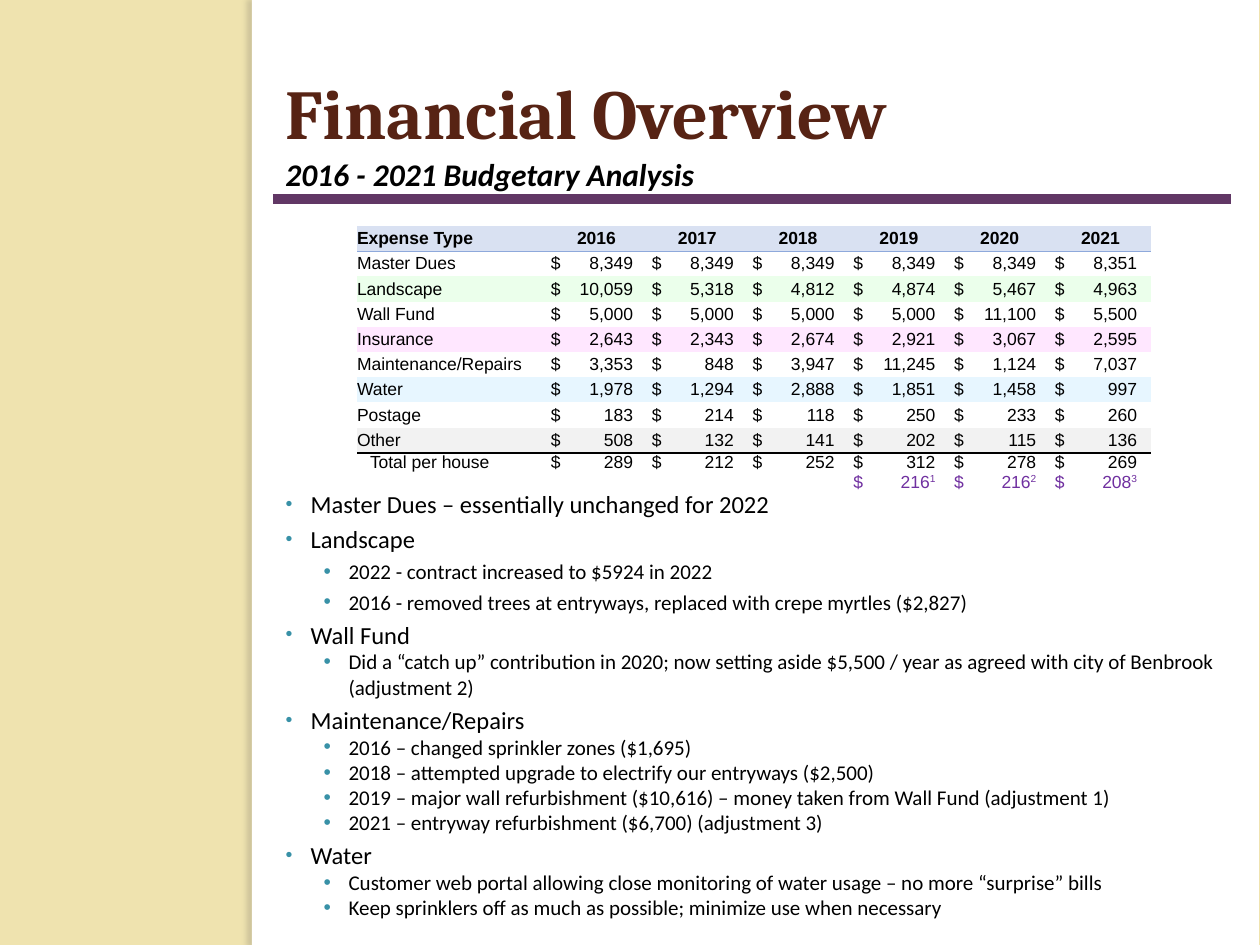
from dataclasses import dataclass

from lxml.etree import SubElement, fromstring
from pptx import Presentation
from pptx.dml.color import RGBColor as RGB
from pptx.enum.shapes import MSO_CONNECTOR as CONNECTOR, MSO_SHAPE as SHAPE
from pptx.enum.text import MSO_ANCHOR as ANCHOR, MSO_AUTO_SIZE as AUTOSIZE, PP_ALIGN as ALIGN
from pptx.oxml.ns import nsdecls, qn
from pptx.util import Pt


@dataclass(frozen=True)
class Theme:
    sand: str = "EFE3AF"
    white: str = "FFFFFF"
    black: str = "000000"
    brown: str = "572314"
    plum: str = "613765"
    bullet: str = "3891A7"
    adjusted: str = "7030A0"
    header: str = "D9E1F2"
    header_rule: str = "8EA9DB"
    shadow: str = "736F63"
    title_font: str = "Cambria"
    body_font: str = "Calibri"
    table_font: str = "Arial"
    title_size: int = 40
    subtitle_size: int = 18
    topic_size: int = 14
    detail_size: int = 12
    table_size: int = 10


THEME = Theme()
EMU_PER_PX = 914400 / 126


def px(length):
    return round(length * EMU_PER_PX)


def write(paragraph, text, font=THEME.body_font, size=THEME.detail_size, color=THEME.black,
          bold=False, italic=False, raised=False):
    run = paragraph.add_run()
    run.text = text
    run.font.name, run.font.size = font, Pt(size)
    run.font.bold, run.font.italic = bold, italic
    run.font.color.rgb = RGB.from_string(color)
    if raised:
        run.font._element.set("baseline", "30000")


deck = Presentation()
deck.slide_width, deck.slide_height = px(1260), px(945)
slide = deck.slides.add_slide(deck.slide_layouts[1])
slide.background.fill.solid()
slide.background.fill.fore_color.rgb = RGB.from_string(THEME.sand)
shapes = slide.shapes
title, notes = slide.placeholders

# White page with a soft shadow along its left edge
for left, width in ((262, 997), (252, 10)):
    page = shapes.add_shape(SHAPE.RECTANGLE, px(left), 0, px(width), px(945))
    page.fill.solid()
    page.fill.fore_color.rgb = RGB.from_string(THEME.white)
    page.line.fill.background()
    page.shadow.inherit = False
page._element.spPr.find(qn("a:effectLst")).append(fromstring(
    f'<a:outerShdw {nsdecls("a")} blurRad="{Pt(3)}" dist="{Pt(3)}" dir="10800000">'
    f'<a:srgbClr val="{THEME.shadow}"><a:alpha val="25000"/></a:srgbClr></a:outerShdw>'))

# Rule under the heading
rule = shapes.add_connector(CONNECTOR.STRAIGHT, px(273), px(199), px(1231), px(199))
rule.line.color.rgb = RGB.from_string(THEME.plum)
rule.line.width = Pt(6)
SubElement(rule._element.spPr, qn("a:effectLst"))

# Title and subtitle
shapes._spTree.append(title._element)
title.left, title.top, title.width, title.height = px(273), px(63), px(958), px(126)
title.text_frame.auto_size = AUTOSIZE.NONE
title.text_frame.vertical_anchor = ANCHOR.TOP
heading = title.text_frame.paragraphs[0]
heading.alignment = ALIGN.LEFT
write(heading, "Financial Overview", font=THEME.title_font, size=THEME.title_size,
      color=THEME.brown, bold=True)

subtitle = shapes.add_textbox(px(273), px(149), px(467), px(50)).text_frame
subtitle.word_wrap = False
subtitle.auto_size = AUTOSIZE.SHAPE_TO_FIT_TEXT
write(subtitle.paragraphs[0], "2016 - 2021 Budgetary Analysis", size=THEME.subtitle_size,
      bold=True, italic=True)

# Expense table: name, row colour, one amount per year
years = range(2016, 2022)
expenses = [
    ("Master Dues", None, (8349, 8349, 8349, 8349, 8349, 8351)),
    ("Landscape", "EBFFEB", (10059, 5318, 4812, 4874, 5467, 4963)),
    ("Wall Fund", None, (5000, 5000, 5000, 5000, 11100, 5500)),
    ("Insurance", "FFE7FF", (2643, 2343, 2674, 2921, 3067, 2595)),
    ("Maintenance/Repairs", None, (3353, 848, 3947, 11245, 1124, 7037)),
    ("Water", "E7F6FF", (1978, 1294, 2888, 1851, 1458, 997)),
    ("Postage", None, (183, 214, 118, 250, 233, 260)),
    ("Other", "F2F2F2", (508, 132, 141, 202, 115, 136)),
    ("Total per house", None, (289, 212, 252, 312, 278, 269)),
]
adjusted_totals = {2019: (216, "1"), 2020: (216, "2"), 2021: (208, "3")}
rows = [("Expense Type", THEME.header, years), *expenses]
total_row = len(rows) - 1
bottom_rules = {0: (THEME.header_rule, 0.5), total_row - 1: (THEME.black, 1)}

frame = shapes.add_table(len(rows), 1 + len(years), px(357), px(226), px(794), px(269))
table = frame.table
table.first_row = table.horz_banding = False
table._tbl.tblPr.find(qn("a:tableStyleId")).text = "{2D5ABB26-0587-4C30-8999-92F81FD0307C}"
for index, column in enumerate(table.columns):
    column.width = px(605) // len(years) if index else px(189)
for index, row in enumerate(table.rows):
    row.height = px(42) if index == total_row else px(227) // total_row

for r, (name, tint, amounts) in enumerate(rows):
    for c, value in enumerate((name, *amounts)):
        cell = table.cell(r, c)
        is_amount = r > 0 and c > 0
        cell.margin_left = px(5 if is_amount else 13 if r == total_row else 0)
        cell.margin_right = cell.margin_top = cell.margin_bottom = 0
        cell.vertical_anchor = ANCHOR.TOP if r == total_row else ANCHOR.MIDDLE
        if tint:
            cell.fill.solid()
            cell.fill.fore_color.rgb = RGB.from_string(tint)
        else:
            cell.fill.background()
        if r in bottom_rules:
            color, weight = bottom_rules[r]
            cell._tc.tcPr.insert(0, fromstring(
                f'<a:lnB {nsdecls("a")} w="{Pt(weight)}"><a:solidFill>'
                f'<a:srgbClr val="{color}"/></a:solidFill></a:lnB>'))

        lines = [(f"$\t{value:,}" if is_amount else str(value), THEME.black, "")]
        if r == total_row and c and years[c - 1] in adjusted_totals:
            amount, footnote = adjusted_totals[years[c - 1]]
            lines.append((f"$\t{amount}", THEME.adjusted, footnote))
        for i, (text, color, footnote) in enumerate(lines):
            line = cell.text_frame.add_paragraph() if i else cell.text_frame.paragraphs[0]
            if is_amount:
                stops = SubElement(line._p.get_or_add_pPr(), qn("a:tabLst"))
                SubElement(stops, qn("a:tab"), pos=str(px(82)), algn="r")
            elif c:
                line.alignment = ALIGN.CENTER
            style = dict(font=THEME.table_font, size=THEME.table_size, color=color)
            write(line, text, bold=r == 0, **style)
            if footnote:
                write(line, footnote, raised=True, **style)

# Notes on each expense: level, space before, text
comments = [
    (0, 0, "Master Dues – essentially unchanged for 2022"),
    (0, 3, "Landscape"),
    (1, 3, "2022 - contract increased to $5924 in 2022"),
    (1, 3, "2016 - removed trees at entryways, replaced with crepe myrtles ($2,827)"),
    (0, 3, "Wall Fund"),
    (1, 0, "Did a “catch up” contribution in 2020; now setting aside $5,500 / year "
           "as agreed with city of Benbrook (adjustment 2)"),
    (0, 3, "Maintenance/Repairs"),
    (1, 0, "2016 – changed sprinkler zones ($1,695)"),
    (1, 0, "2018 – attempted upgrade to electrify our entryways ($2,500)"),
    (1, 0, "2019 – major wall refurbishment ($10,616) – money taken from Wall Fund (adjustment 1)"),
    (1, 0, "2021 – entryway refurbishment ($6,700) (adjustment 3)"),
    (0, 3, "Water"),
    (1, 0, "Customer web portal allowing close monitoring of water usage "
           "– no more “surprise” bills"),
    (1, 0, "Keep sprinklers off as much as possible; minimize use when necessary"),
]
shapes._spTree.append(notes._element)
notes.left, notes.top, notes.width, notes.height = px(273), px(483), px(976), px(336)
notes.text_frame.auto_size = AUTOSIZE.NONE
notes.text_frame.vertical_anchor = ANCHOR.TOP
for i, (level, gap, text) in enumerate(comments):
    comment = notes.text_frame.add_paragraph() if i else notes.text_frame.paragraphs[0]
    comment.level = level
    comment.space_before = Pt(gap)
    props = comment._p.get_or_add_pPr()
    props.set("marL", str(px(63 if level else 25)))
    props.set("indent", str(px(-25)))
    SubElement(SubElement(props, qn("a:buClr")), qn("a:srgbClr"), val=THEME.bullet)
    SubElement(props, qn("a:buSzPct"), val="100000" if level else "80000")
    SubElement(props, qn("a:buFont"), typeface=THEME.table_font)
    SubElement(props, qn("a:buChar"), char="•")
    write(comment, text, size=THEME.detail_size if level else THEME.topic_size)

deck.save("out.pptx")
